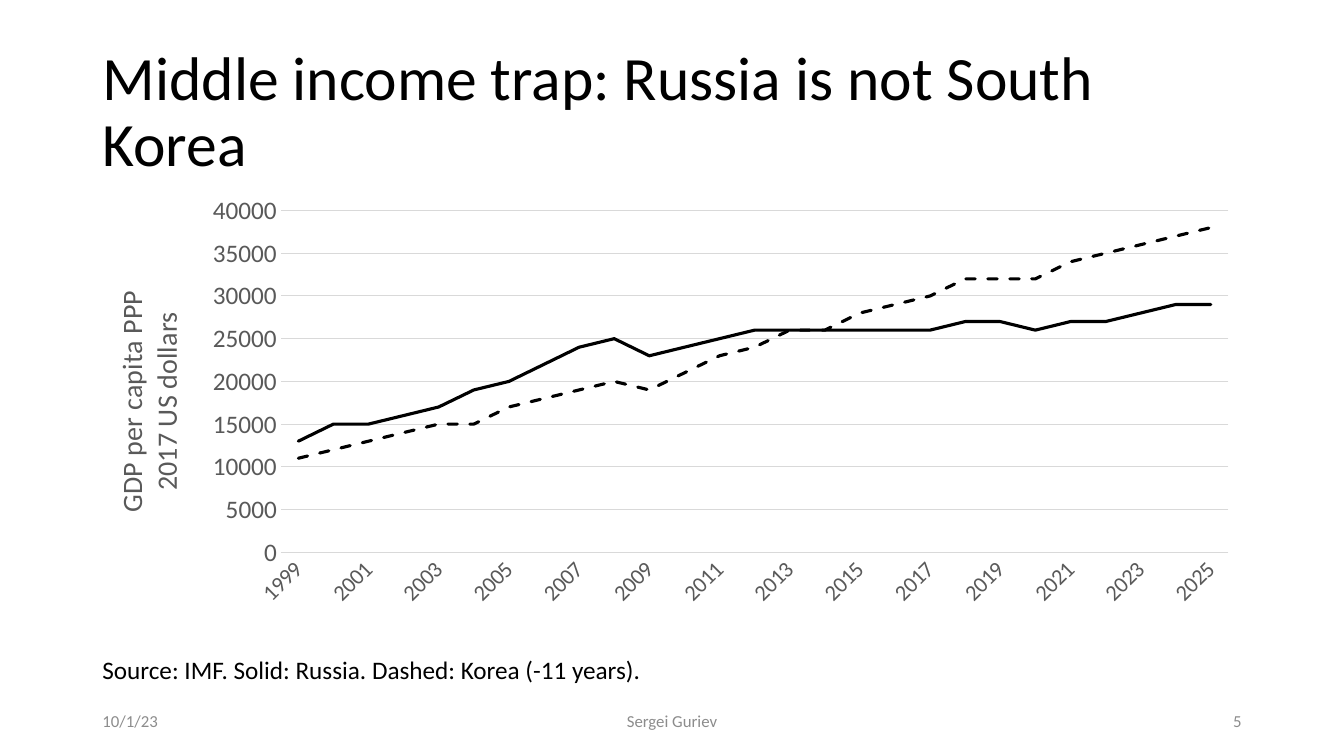
from lxml import etree
from pptx import Presentation
from pptx import util as u
from pptx.chart import data
from pptx.dml.color import RGBColor
from pptx.enum import chart as ch, dml, text
from pptx.oxml import ns

BLACK = RGBColor(0x00, 0x00, 0x00)
GREY = RGBColor(0x59, 0x59, 0x59)
GRID = RGBColor(0xD9, 0xD9, 0xD9)
FOOTER = RGBColor(0x8C, 0x8C, 0x8C)
FONT = "Calibri"
MARGIN, CONTENT = 6.88, 86.25  # percent of slide width

prs = Presentation()
prs.slide_width, prs.slide_height = u.Inches(13.33), u.Inches(7.5)
s = prs.slides.add_slide(prs.slide_layouts[5])


def box(left, top, width, height):
    """Turn percentages of the slide into left, top, width, height."""
    w, h = prs.slide_width / 100, prs.slide_height / 100
    return [round(n) for n in (left * w, top * h, width * w, height * h)]


def style(font, size, color):
    font.name, font.size = FONT, u.Pt(size)
    font.color.rgb = color


# Title
title = s.shapes.title
title.left, title.top, title.width, title.height = box(MARGIN, 5.33, CONTENT, 19.33)
tf = title.text_frame
tf.text = "Middle income trap: Russia is not South Korea"
tf.word_wrap, tf.auto_size = True, text.MSO_AUTO_SIZE.NONE
tf.vertical_anchor = text.MSO_ANCHOR.MIDDLE
p = tf.paragraphs[0]
p.alignment, p.line_spacing = text.PP_ALIGN.LEFT, 0.9
style(p.runs[0].font, 44, BLACK)

# Chart data: GDP per capita in thousands, Korea shifted by 11 years
russia = [13, 15, 15, 16, 17, 19, 20, 22, 24, 25, 23, 24, 25, 26,
          26, 26, 26, 26, 26, 27, 27, 26, 27, 27, 28, 29, 29]
korea = [11, 12, 13, 14, 15, 15, 17, 18, 19, 20, 19, 21, 23, 24,
         26, 26, 28, 29, 30, 32, 32, 32, 34, 35, 36, 37, 38]
cd = data.CategoryChartData(number_format="General")
cd.categories = [str(year) for year in range(1999, 2026)]
for name, thousands in (("Series 1", russia), ("Series 2", korea)):
    cd.add_series(name, [1000 * n for n in thousands])
chart = s.shapes.add_chart(ch.XL_CHART_TYPE.LINE,
                           *box(MARGIN, 24.67, CONTENT, 56.8), cd).chart
chart.has_legend = chart.has_title = False
style(chart.font, 10, BLACK)
chart.plots[0].vary_by_categories = False

# Lines with round ends
dashes = [dml.MSO_LINE.SOLID, dml.MSO_LINE.DASH]
for series, dash in zip(chart.plots[0].series, dashes):
    series.smooth = False
    series.marker.style = ch.XL_MARKER_STYLE.NONE
    line = series.format.line
    line.color.rgb, line.width, line.dash_style = BLACK, u.Pt(2.25), dash
    series._element.spPr.find(ns.qn("a:ln")).set("cap", "rnd")

# Axes
years, dollars = chart.category_axis, chart.value_axis
for axis, size in ((years, 16), (dollars, 18)):
    axis.major_tick_mark = axis.minor_tick_mark = ch.XL_TICK_MARK.NONE
    style(axis.tick_labels.font, size, GREY)
dollars.minimum_scale, dollars.maximum_scale, dollars.major_unit = 0, 40000, 5000
dollars.format.line.fill.background()
for line in (years.format.line, dollars.major_gridlines.format.line):
    line.color.rgb, line.width = GRID, u.Pt(0.75)

# Every second year, slanted
years._element.txPr.find(ns.qn("a:bodyPr")).set("rot", "-2700000")
skip = etree.Element(ns.qn("c:tickLblSkip"), val="2")
years._element.find(ns.qn("c:noMultiLvlLbl")).addprevious(skip)

# Value axis title
tf = dollars.axis_title.text_frame
tf.text = "GDP per capita PPP"
tf.add_paragraph().text = "2017 US dollars"
for p in tf.paragraphs:
    style(p.runs[0].font, 20, GREY)
    p.runs[0].font.bold = False
body = tf._txBody.find(ns.qn("a:bodyPr"))
body.set("rot", "-5400000")
body.set("vert", "horz")

# Fixed places for the axis title and the plot, in percent of the chart
title_el = dollars.axis_title._element
plot_el = chart._chartSpace.chart.plotArea
for parent, index, place in (
    (title_el, 1, {"x": 1.5, "y": 23.5}),
    (plot_el, 0, {"x": 16.25, "y": 5.6, "w": 81.75, "h": 79.6}),
):
    for old in parent.findall(ns.qn("c:layout")):
        parent.remove(old)
    layout = etree.Element(ns.qn("c:layout"))
    manual = etree.SubElement(layout, ns.qn("c:manualLayout"))
    if parent is plot_el:
        etree.SubElement(manual, ns.qn("c:layoutTarget"), val="inner")
    for mode in ("xMode", "yMode"):
        etree.SubElement(manual, ns.qn("c:" + mode), val="edge")
    for name, percent in place.items():
        etree.SubElement(manual, ns.qn("c:" + name), val=str(percent / 100))
    parent.insert(index, layout)

# Source line and footer
A, M = text.PP_ALIGN, text.MSO_ANCHOR
source = "Source: IMF. Solid: Russia. Dashed: Korea (-11 years)."
for words, place, align, anchor, size, color in (
    (source, (MARGIN, 85.87, 41.7, 5.33), A.LEFT, M.TOP, 18, BLACK),
    ("10/1/23", (MARGIN, 92.67, 22.5, 5.33), A.LEFT, M.MIDDLE, 12, FOOTER),
    ("Sergei Guriev", (33.13, 92.67, 33.75, 5.33), A.CENTER, M.MIDDLE, 12, FOOTER),
    ("5", (70.63, 92.67, 22.5, 5.33), A.RIGHT, M.MIDDLE, 12, FOOTER),
):
    tf = s.shapes.add_textbox(*box(*place)).text_frame
    tf.text = words
    tf.word_wrap, tf.vertical_anchor = words != source, anchor
    p = tf.paragraphs[0]
    p.alignment = align
    style(p.runs[0].font, size, color)

prs.save("out.pptx")
